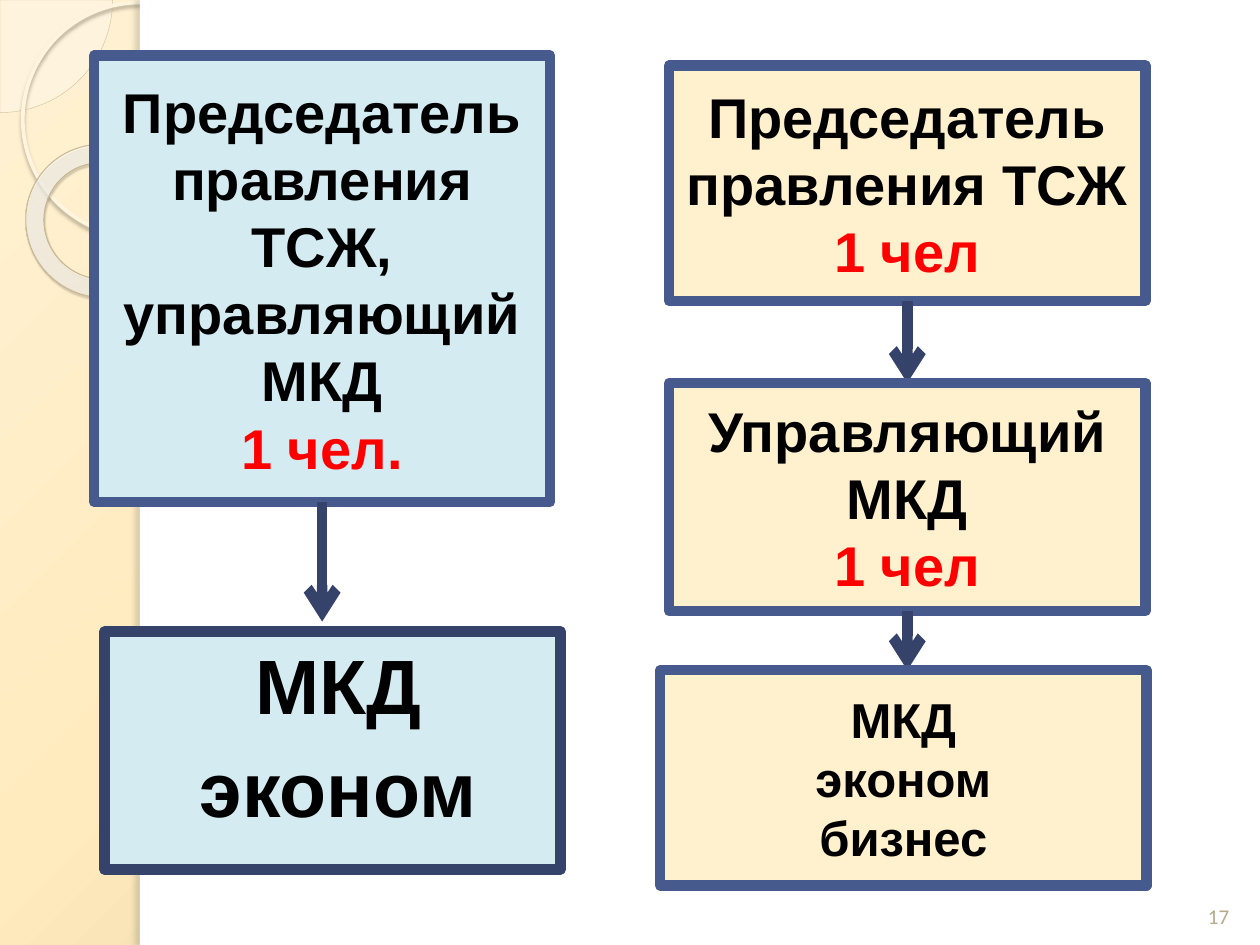
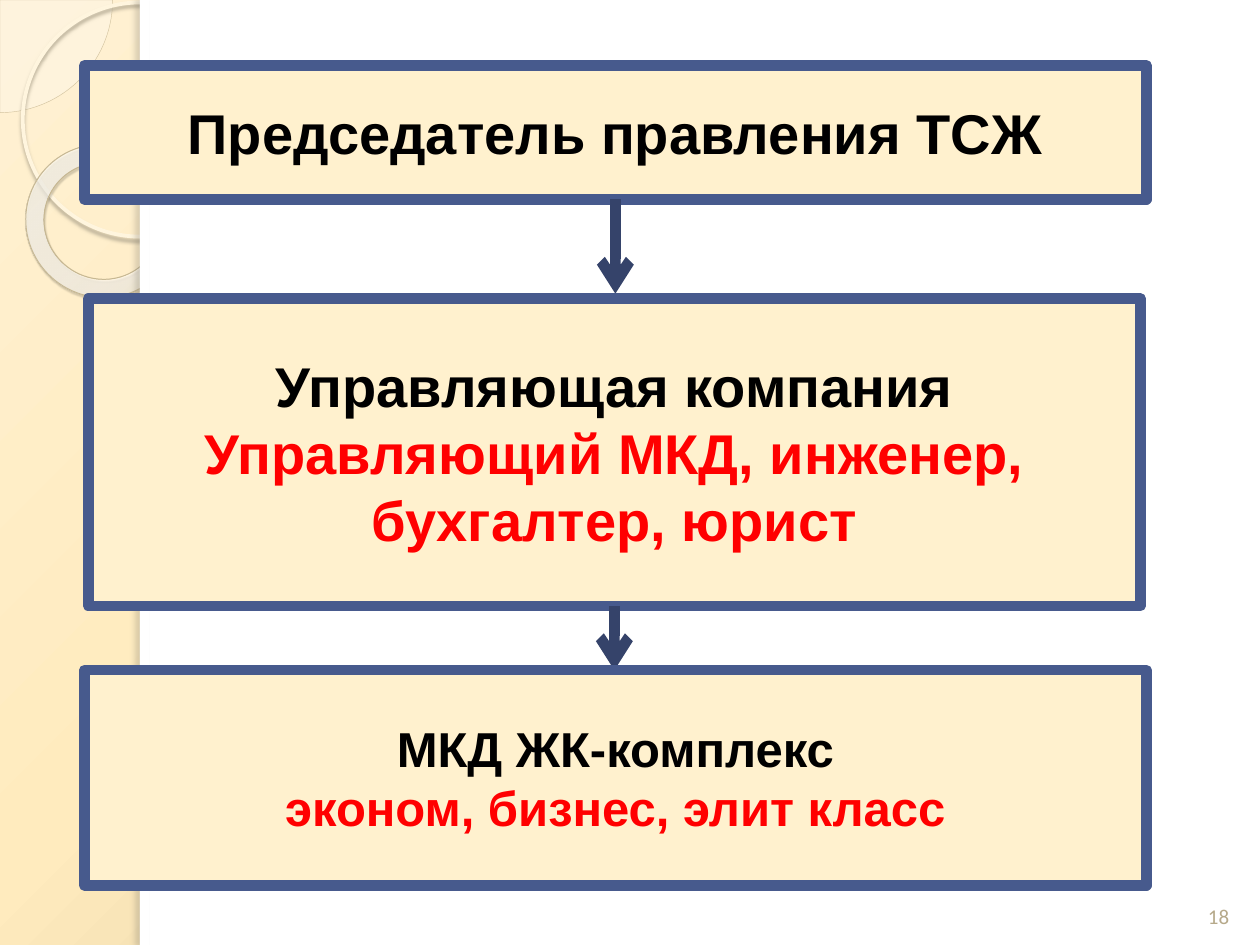
from collections import namedtuple

from pptx import Presentation
from pptx import util as u
from pptx.dml.color import RGBColor
from pptx.enum import shapes, text
from pptx.oxml import parse_xml
from pptx.oxml.ns import nsdecls, qn

BLACK = RGBColor(0x00, 0x00, 0x00)
WHITE = RGBColor(0xFF, 0xFF, 0xFF)
RED = RGBColor(0xFF, 0x00, 0x00)
AQUA = RGBColor(0xD4, 0xEB, 0xF1)
CREAM = RGBColor(0xFF, 0xF1, 0xCE)
BLUE = RGBColor(0x47, 0x5A, 0x8D)
NAVY = RGBColor(0x35, 0x43, 0x6A)
SAND = RGBColor(0xB6, 0xA9, 0x8A)
PIE_FILL = RGBColor(0xFE, 0xFA, 0xF4)
PIE_LINE = RGBColor(0xD3, 0xC3, 0x9F)
CIRCLE_LINE = RGBColor(0xFF, 0xF5, 0xDE)
CIRCLE_SHADOW = RGBColor(0xB0, 0xA6, 0x8F)
RING_LINE = RGBColor(0xC7, 0xB8, 0x93)
RING_SHADOW = RGBColor(0x5A, 0x54, 0x44)
EDGE_SHADOW = RGBColor(0x73, 0x6F, 0x63)
BACKDROP_STOPS = [
    (0, RGBColor(0xFF, 0xF1, 0xD3), 100),
    (40, RGBColor(0xFF, 0xEB, 0xBE), 100),
    (100, RGBColor(0xC9, 0xB4, 0x84), 100),
]
RING_STOPS = [
    (0, RGBColor(0xFF, 0xFC, 0xF6), 70),
    (70, RGBColor(0xFF, 0xFE, 0xFB), 55),
    (100, RGBColor(0xF0, 0xD2, 0x8E), 60),
]

SHAPE = shapes.MSO_SHAPE
STROKE = 6
Box = namedtuple("Box", "left top width height")
Block = namedtuple("Block", "box lines size fill line gap", defaults=(32, CREAM, BLUE, 0))


def apply(target, values):
    """Set attributes of an object from a dict of format values."""
    for name, value in values.items():
        setattr(target, name, value)


def color_xml(color, opacity):
    """Return the markup of a colour with an opacity in percent."""
    return f'<a:srgbClr val="{color}"><a:alpha val="{opacity * 1000}"/></a:srgbClr>'


def set_radial(fill, holder, stops, focus):
    """Give a fill a circular gradient that spreads from a focus rectangle."""
    fill.solid()
    marks = "".join(f'<a:gs pos="{place * 1000}">{color_xml(color, opacity)}</a:gs>'
                    for place, color, opacity in stops)
    sides = " ".join(f'{side}="{value * 1000}"' for side, value in zip("ltrb", focus))
    gradient = parse_xml(
        f'<a:gradFill {nsdecls("a")} rotWithShape="1"><a:gsLst>{marks}</a:gsLst>'
        f'<a:path path="circle"><a:fillToRect {sides}/></a:path></a:gradFill>')
    holder.replace(holder.find(qn("a:solidFill")), gradient)


def set_shadow(shape, color, opacity, blur, distance, angle):
    """Add an outer shadow to a shape."""
    effects = shape.element.spPr.find(qn("a:effectLst"))
    effects.append(parse_xml(
        f'<a:outerShdw {nsdecls("a")} blurRad="{u.Pt(blur)}" dist="{u.Pt(distance)}" '
        f'dir="{angle * 60000}" algn="tl" rotWithShape="0">{color_xml(color, opacity)}</a:outerShdw>'))


def add_figure(page, kind, box, fill=None, line=None, width=0):
    """Add a preset shape with a plain fill and line."""
    figure = page.shapes.add_shape(kind, *map(u.Cm, box))
    figure.shadow.inherit = False
    if fill is None:
        figure.fill.background()
    else:
        figure.fill.solid()
        figure.fill.fore_color.rgb = fill
    if line is None:
        figure.line.fill.background()
    else:
        figure.line.color.rgb = line
        figure.line.width = u.Pt(width)
    return figure


def write(para, words, **font):
    """Write centred text in a paragraph with one font format."""
    para.alignment = text.PP_ALIGN.CENTER
    para.text = words
    color = font.pop("color")
    for span in para.runs:
        apply(span.font, font)
        span.font.color.rgb = color


def decorate_master(deck, page):
    """Draw the side band and its rings and move them to the master."""
    master = deck.slide_master
    backdrop = master.background.fill
    set_radial(backdrop, master.element.find(".//" + qn("p:bgPr")),
               BACKDROP_STOPS, (-24, -20, 124, 120))

    pie = add_figure(page, SHAPE.PIE, Box(-2.27, -2.27, 4.54, 4.54), PIE_FILL, PIE_LINE, 0.25)
    pie.adjustments[0], pie.adjustments[1] = 0, 54
    tint = pie.element.spPr.find(qn("a:solidFill"))[0]
    tint.append(parse_xml(f'<a:alpha {nsdecls("a")} val="33000"/>'))

    circle = add_figure(page, SHAPE.OVAL, Box(0.46, 0.05, 4.72, 4.72), None, CIRCLE_LINE, 2.15)
    set_shadow(circle, CIRCLE_SHADOW, 85, 2, 2, 90)

    ring = add_figure(page, SHAPE.DONUT, Box(0.51, 2.92, 3.12, 3.07), WHITE, RING_LINE, 0.58)
    ring.adjustments[0] = 0.12
    ring.rotation = 38.6
    set_radial(ring.fill, ring.element.spPr, RING_STOPS, (-408, -50, 508, 150))
    set_shadow(ring, RING_SHADOW, 35, 1, 1.2, 75)

    add_figure(page, SHAPE.RECTANGLE, Box(2.82, 0, 22.58, 19.05), WHITE)
    edge = add_figure(page, SHAPE.RECTANGLE, Box(2.82, 0, 0.2, 19.05), WHITE)
    set_shadow(edge, EDGE_SHADOW, 25, 3, 3, 180)

    tree = master.element.find(".//" + qn("p:spTree"))
    for number, figure in enumerate(list(page.shapes), 100):
        figure.element.find(".//" + qn("p:cNvPr")).set("id", str(number))
        tree.append(figure.element)


def add_page_number(page, number, box):
    """Write the page number in its box."""
    frame = page.shapes.add_textbox(*map(u.Cm, box)).text_frame
    apply(frame, {"word_wrap": True, "vertical_anchor": text.MSO_ANCHOR.BOTTOM})
    write(frame.paragraphs[0], str(number), name="Calibri", size=u.Pt(12), color=SAND)


def add_block(page, block):
    """Add a framed block with bold lines and return its text frame."""
    figure = add_figure(page, SHAPE.RECTANGLE, block.box, block.fill, block.line, STROKE)
    frame = figure.text_frame
    apply(frame, {"word_wrap": True, "vertical_anchor": text.MSO_ANCHOR.MIDDLE})
    for index, (words, color) in enumerate(block.lines):
        para = frame.add_paragraph() if index else frame.paragraphs[0]
        write(para, words, name="Arial", size=u.Pt(block.size), bold=True, color=color)
    return frame


def add_arrow(page, upper, lower, gap):
    """Draw an arrow down from the middle of one box towards the next."""
    middle = upper.left + upper.width / 2
    ends = middle, upper.top + upper.height, middle, lower.top - gap
    arrow = page.shapes.add_connector(shapes.MSO_CONNECTOR.STRAIGHT, *map(u.Cm, ends))
    arrow.line.color.rgb = NAVY
    arrow.line.width = u.Pt(STROKE)
    arrow.line.fill
    properties = arrow.element.spPr
    properties.find(qn("a:ln")).append(parse_xml(f'<a:tailEnd {nsdecls("a")} type="arrow"/>'))
    properties.append(parse_xml(f'<a:effectLst {nsdecls("a")}/>'))


def add_chain(page, blocks):
    """Stack blocks joined by arrows and return their text frames."""
    frames = []
    for index, block in enumerate(blocks):
        if index:
            add_arrow(page, blocks[index - 1].box, block.box, block.gap)
        frames.append(add_block(page, block))
    return frames


def fill_small_house_page(page):
    """Compare the one-person and the two-person schemes."""
    economy = add_chain(page, [
        Block(Box(1.9, 1.12, 9.19, 9),
              [("Председатель правления ТСЖ,\vуправляющий МКД", BLACK), ("1 чел.", RED)], fill=AQUA),
        Block(Box(2.11, 12.73, 9.19, 4.8),
              [("МКД", BLACK), ("эконом", BLACK)], 44, AQUA, NAVY, gap=0.2),
    ])[-1]
    apply(economy, {"vertical_anchor": text.MSO_ANCHOR.TOP, "margin_left": u.Cm(0.48)})
    for para in economy.paragraphs:
        para.space_before = u.Pt(6)

    add_chain(page, [
        Block(Box(13.49, 1.32, 9.6, 4.75), [("Председатель правления ТСЖ", BLACK), ("1 чел", RED)]),
        Block(Box(13.49, 7.72, 9.6, 4.6), [("Управляющий МКД", BLACK), ("1 чел", RED)]),
        Block(Box(13.31, 13.51, 9.8, 4.34),
              [(words, BLACK) for words in ("МКД", "эконом", "бизнес")], 28),
    ])


def fill_company_page(page):
    """Show the scheme with a managing company."""
    add_chain(page, [
        Block(Box(1.7, 1.32, 21.41, 2.7), [("Председатель правления ТСЖ", BLACK)]),
        Block(Box(1.78, 6.02, 21.21, 6.2),
              [("Управляющая компания", BLACK),
               ("Управляющий МКД, инженер, бухгалтер, юрист", RED)], gap=0.1),
        Block(Box(1.7, 13.51, 21.41, 4.34),
              [("МКД ЖК-комплекс", BLACK), ("эконом, бизнес, элит класс", RED)], 28),
    ])


def main():
    """Build and save the deck."""
    deck = Presentation()
    apply(deck, {"slide_width": u.Cm(25.4), "slide_height": u.Cm(19.05)})
    blank = deck.slide_layouts.get_by_name("Blank")
    fillers = fill_small_house_page, fill_company_page
    pages = [deck.slides.add_slide(blank) for _ in fillers]
    decorate_master(deck, pages[0])
    for number, (page, fill_page) in enumerate(zip(pages, fillers), 17):
        add_page_number(page, number, Box(23.93, 17.53, 1.27, 1.32))
        fill_page(page)
    deck.save("out.pptx")


if __name__ == "__main__":
    main()
